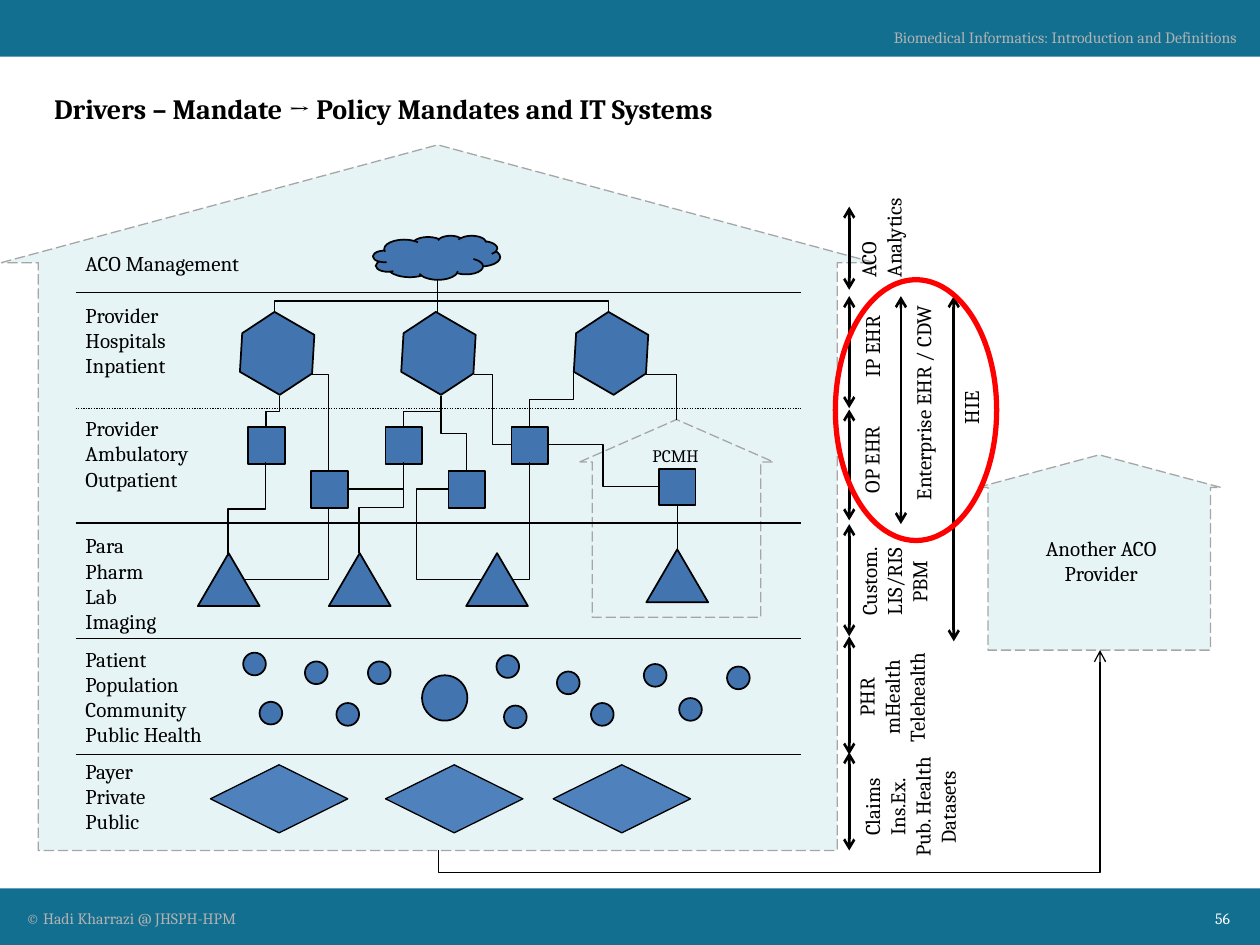
from dataclasses import dataclass

from lxml import etree
from pptx import Presentation
from pptx.dml.color import RGBColor
from pptx.enum.dml import MSO_LINE
from pptx.enum.shapes import MSO_CONNECTOR as LINK, MSO_SHAPE as SHAPE
from pptx.enum.text import MSO_ANCHOR, MSO_AUTO_SIZE as AUTOSIZE, PP_ALIGN as ALIGN
from pptx.oxml.ns import qn
from pptx.util import Inches, Pt


@dataclass(frozen=True)
class Theme:
    font: str = "Cambria"
    band: RGBColor = RGBColor(0x12, 0x6F, 0x90)
    house: RGBColor = RGBColor(0xE7, 0xF4, 0xF5)
    house_edge: RGBColor = RGBColor(0xA6, 0xA6, 0xA6)
    node: RGBColor = RGBColor(0x42, 0x74, 0xAF)
    payer: RGBColor = RGBColor(0x4F, 0x81, 0xBD)
    ink: RGBColor = RGBColor(0, 0, 0)
    muted: RGBColor = RGBColor(0xB2, 0xB2, 0xB2)
    white: RGBColor = RGBColor(255, 255, 255)
    highlight: RGBColor = RGBColor(255, 0, 0)
    title_size: Pt = Pt(16)
    label_size: Pt = Pt(12)
    small_size: Pt = Pt(10)
    footer_size: Pt = Pt(9)


theme = Theme()
presentation = Presentation()
presentation.slide_width, presentation.slide_height = Inches(10), Inches(7.5)
slide = presentation.slides.add_slide(presentation.slide_layouts[5])
shapes = slide.shapes


def add_text(text, box, align=ALIGN.LEFT, size=theme.label_size, color=theme.ink,
             rotation=0, wrap=False):
    textbox = shapes.add_textbox(*map(Inches, box))
    textbox.rotation = rotation
    frame = textbox.text_frame
    frame.text = text
    frame.word_wrap = wrap
    frame.auto_size = AUTOSIZE.SHAPE_TO_FIT_TEXT
    for paragraph in frame.paragraphs:
        paragraph.alignment = align
        for name, value in {"name": theme.font, "size": size}.items():
            setattr(paragraph.font, name, value)
        paragraph.font.color.rgb = color


def add_line(begin, end, route="straight", bend=0.5, width=0.75, ends=()):
    """Route is straight, or begins "across" or "down"; a bend of None makes one corner."""
    (x1, y1), (x2, y2) = begin, end
    if route == "down":
        # Lay the elbow out on its side, then turn it a quarter about its centre
        middle_x, middle_y = (x1 + x2) / 2, (y1 + y2) / 2
        half_x, half_y = (x2 - x1) / 2, (y2 - y1) / 2
        x1, y1 = middle_x - half_y, middle_y + half_x
        x2, y2 = middle_x + half_y, middle_y - half_x
    kind = LINK.STRAIGHT if route == "straight" else LINK.ELBOW
    line = shapes.add_connector(kind, *map(Inches, (x1, y1, x2, y2)))
    line.line.color.rgb = theme.ink
    line.line.width = Pt(width)
    properties = line._element.spPr
    if route == "down":
        properties.find(qn("a:xfrm")).set("rot", "5400000")
    if route != "straight":
        geometry = properties.find(qn("a:prstGeom"))
        if bend is None:
            geometry.set("prst", "bentConnector2")
        else:
            etree.SubElement(geometry.find(qn("a:avLst")), qn("a:gd"),
                             name="adj1", fmla=f"val {round(bend * 100000)}")
    for end_name in ends:
        etree.SubElement(properties.find(qn("a:ln")), qn(f"a:{end_name}"), type="arrow")
    etree.SubElement(properties, qn("a:effectLst"))
    return line


# Bands, footer and title
for top in (0, 7.05):
    band = shapes.add_shape(SHAPE.RECTANGLE, 0, Inches(top), Inches(10), Inches(0.45))
    band.shadow.inherit = False
    band.fill.solid()
    band.fill.fore_color.rgb = theme.band
    band.line.fill.background()
footer = {"size": theme.footer_size, "color": theme.muted}
add_text("© Hadi Kharrazi @ JHSPH-HPM", (0.11, 7.16, 6.21, 0.25), wrap=True, **footer)
add_text("Biomedical Informatics: Introduction and Definitions",
         (6.72, 0.17, 3.19, 0.25), ALIGN.RIGHT, **footer)
add_text("56", (9.21, 7.16, 0.65, 0.25), ALIGN.RIGHT, theme.footer_size, theme.white, wrap=True)

title = shapes.title
title_box = {"left": 0.33, "top": 0.66, "width": 9.33, "height": 0.4}
for name, value in title_box.items():
    setattr(title, name, Inches(value))
title.text = "Drivers – Mandate → Policy Mandates and IT Systems"
title.text_frame.auto_size = AUTOSIZE.NONE
title.text_frame.vertical_anchor = MSO_ANCHOR.MIDDLE
paragraph = title.text_frame.paragraphs[0]
paragraph.alignment = ALIGN.LEFT
for name, value in {"name": theme.font, "size": theme.title_size, "bold": True}.items():
    setattr(paragraph.font, name, value)
paragraph.font.color.rgb = theme.ink

# Organisations: box, shaft width and head height
houses = [((0.01, 1.15, 6.93, 5.6), 0.915, 0.167),
          ((4.6, 3.33, 1.54, 1.57), 0.868, 0.219),
          ((7.76, 3.61, 1.93, 1.55), 0.915, 0.167)]
for box, shaft, head in houses:
    house = shapes.add_shape(SHAPE.UP_ARROW, *map(Inches, box))
    house.adjustments[0], house.adjustments[1] = shaft, head
    house.shadow.inherit = False
    house.fill.solid()
    house.fill.fore_color.rgb = theme.house
    house.line.color.rgb = theme.house_edge
    house.line.width = Pt(0.75)
    house.line.dash_style = MSO_LINE.LONG_DASH

# Levels of care
for level in (2.32, 3.24, 4.15, 5.07, 5.99):
    divider = add_line((0.6, level), (6.36, level))
    if level == 3.24:
        divider.line.dash_style = MSO_LINE.ROUND_DOT
level_labels = [("ACO Management", 1.94, 1.57, 0.3),
                ("Provider\nHospitals\nInpatient", 2.35, 0.91, 0.71),
                ("Provider\nAmbulatory\nOutpatient", 3.25, 1.09, 0.71),
                ("Para\nPharm\nLab\nImaging", 4.18, 0.82, 0.91),
                ("Patient\nPopulation\nCommunity\nPublic Health", 5.08, 1.22, 0.91),
                ("Payer\nPrivate\nPublic", 5.97, 0.73, 0.71)]
for text, top, width, height in level_labels:
    add_text(text, (0.58, top, width, height))
add_text("PCMH", (5.08, 3.48, 0.62, 0.27), size=theme.small_size)
add_text("Another ACO\nProvider", (8.14, 4.2, 1.2, 0.5), ALIGN.CENTER)

# Nodes: kind, width, height, rotation, fill, line width, positions
people = [(1.93, 5.18), (2.06, 5.57), (2.42, 5.25), (2.67, 5.58), (2.92, 5.25), (3.94, 5.2),
          (4, 5.6), (4.42, 5.33), (4.69, 5.58), (5.11, 5.27), (5.39, 5.54), (5.77, 5.29)]
clinics = [(1.97, 3.39), (2.47, 3.74), (3.06, 3.39), (3.56, 3.74), (4.06, 3.39), (5.23, 3.72)]
services = [(1.57, 4.39), (2.61, 4.39), (3.7, 4.39), (5.13, 4.36)]
nodes = [(SHAPE.CLOUD, 1.01, 0.35, 0, theme.node, 1, [(2.96, 1.87)]),
         (SHAPE.HEXAGON, 0.64, 0.55, 30, theme.node, 1, [(1.88, 2.53), (3.16, 2.53), (4.53, 2.53)]),
         (SHAPE.RECTANGLE, 0.29, 0.29, 0, theme.node, 1, clinics),
         (SHAPE.ISOSCELES_TRIANGLE, 0.49, 0.42, 0, theme.node, 1, services),
         (SHAPE.OVAL, 0.36, 0.36, 0, theme.node, 1, [(3.35, 5.36)]),
         (SHAPE.OVAL, 0.18, 0.18, 0, theme.node, 1, people),
         (SHAPE.DIAMOND, 1.09, 0.54, 0, theme.payer, 0.75, [(1.67, 6.07), (3.06, 6.07), (4.39, 6.07)])]
last_of_kind = {}
for kind, width, height, rotation, fill, line_width, positions in nodes:
    for left, top in positions:
        node = shapes.add_shape(kind, *map(Inches, (left, top, width, height)))
        node.rotation = rotation
        node.shadow.inherit = False
        node.fill.solid()
        node.fill.fore_color.rgb = fill
        node.line.color.rgb = theme.ink
        node.line.width = Pt(line_width)
        last_of_kind[kind] = node

# Links between the nodes: begin, end, first direction, bend
links = [((3.47, 2.22), (2.18, 2.48), "down", 0.65),
         ((3.47, 2.22), (4.83, 2.48), "down", 0.65),
         ((3.47, 2.22), (3.47, 2.48), "straight", None),
         ((2.22, 3.14), (2.11, 3.39), "down", 0.5),
         ((2.48, 2.97), (2.61, 3.74), "across", None),
         ((3.5, 3.14), (3.2, 3.39), "down", 0.5),
         ((3.2, 3.67), (2.76, 3.88), "down", None),
         ((4.55, 2.95), (4.2, 3.39), "down", 0.5),
         ((3.76, 2.97), (4.06, 3.53), "across", 0.5),
         ((3.5, 3.14), (3.7, 3.74), "down", 0.5),
         ((5.12, 2.97), (5.37, 3.33), "across", None),
         ((4.34, 3.53), (5.23, 3.86), "across", 0.5),
         ((4.2, 3.67), (4.06, 4.6), "down", None),
         ((3.56, 3.88), (3.82, 4.6), "across", -0.97),
         ((3.2, 3.67), (2.85, 4.39), "down", 0.5),
         ((2.61, 4.02), (1.93, 4.6), "down", None),
         ((2.11, 3.67), (1.81, 4.41), "down", 0.5)]
for begin, end, route, bend in links:
    add_line(begin, end, route, bend)
pcmh_link = add_line((5.37, 4.36), (5.37, 4.01))
pcmh_link.begin_connect(last_of_kind[SHAPE.ISOSCELES_TRIANGLE], 0)
pcmh_link.end_connect(last_of_kind[SHAPE.RECTANGLE], 2)
add_line((3.48, 6.75), (8.73, 5.16), "down", -0.11, ends=["tailEnd"])

# IT systems: span of the arrow, then the upright label
systems = [(6.74, 1.64, 2.3, "ACO\nAnalytics", (6.55, 1.61, 0.88, 0.5), ALIGN.LEFT),
           (6.74, 2.35, 3.24, "IP EHR", (6.53, 2.65, 0.78, 0.3), ALIGN.RIGHT),
           (6.74, 3.25, 4.13, "OP EHR", (6.5, 3.55, 0.83, 0.3), ALIGN.RIGHT),
           (6.74, 4.16, 5.05, "Custom.\nLIS/RIS\nPBM", (6.69, 4.26, 0.82, 0.71), ALIGN.CENTER),
           (6.74, 5.05, 5.99, "PHR\nmHealth\nTelehealth", (6.59, 5.18, 0.98, 0.71), ALIGN.CENTER),
           (6.74, 5.97, 6.75, "Claims\nIns.Ex.\nPub. Health\nDatasets",
            (6.66, 5.95, 1.13, 0.91), ALIGN.CENTER),
           (7.15, 2.35, 4.16, "Enterprise EHR / CDW", (6.35, 3.15, 1.95, 0.3), ALIGN.RIGHT),
           (7.57, 2.35, 5.09, "HIE", (7.45, 3.11, 0.51, 0.3), ALIGN.RIGHT)]
for x, top, bottom, text, box, align in systems:
    add_line((x, top), (x, bottom), width=1.5, ends=["headEnd", "tailEnd"])
    add_text(text, box, align, rotation=270)

highlight = shapes.add_shape(SHAPE.OVAL, *map(Inches, (6.63, 2.22, 1.28, 2.07)))
highlight.shadow.inherit = False
highlight.fill.background()
highlight.line.color.rgb = theme.highlight
highlight.line.width = Pt(3)

presentation.save("out.pptx")
